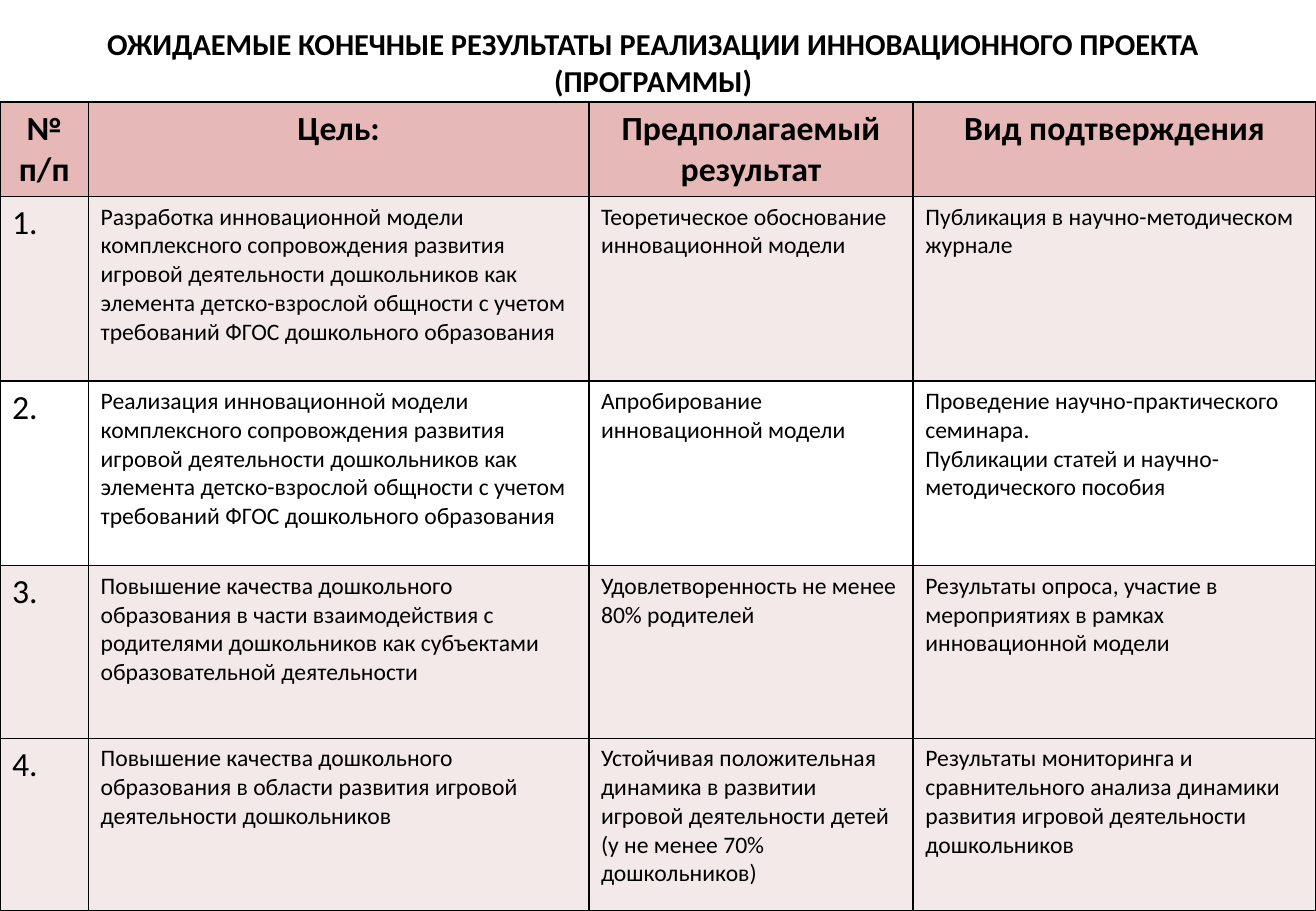
from typing import NamedTuple

from lxml.etree import SubElement
from pptx import Presentation
from pptx.dml.color import RGBColor
from pptx.enum.text import PP_ALIGN as Align
from pptx.oxml.ns import qn
from pptx.util import Cm, Pt

FONT = "Calibri"
BLACK, WHITE, ROSE, PALE_ROSE = "000000", "FFFFFF", "E6B9B8", "F4E9E9"
SLIDE_W, SLIDE_H = 27.51, 19.05
TABLE_TOP = 2.13
COL_WIDTHS = (1.85, 10.46, 6.78, 8.42)
ROW_HEIGHTS = (1.98, 3.86, 3.86, 3.61, 3.61)

TITLE = "ОЖИДАЕМЫЕ КОНЕЧНЫЕ РЕЗУЛЬТАТЫ РЕАЛИЗАЦИИ ИННОВАЦИОННОГО ПРОЕКТА (ПРОГРАММЫ)"
HEADERS = ("№\nп/п", "Цель:", "Предполагаемый результат", "Вид подтверждения")


class Goal(NamedTuple):
    goal: str
    result: str
    evidence: str
    fill: str = PALE_ROSE


GOALS = (
    Goal("Разработка инновационной модели комплексного сопровождения развития "
         "игровой деятельности дошкольников как элемента детско-взрослой общности "
         "с учетом требований ФГОС дошкольного образования",
         "Теоретическое обоснование инновационной модели",
         "Публикация в научно-методическом журнале"),
    Goal("Реализация инновационной модели комплексного сопровождения развития "
         "игровой деятельности дошкольников как элемента детско-взрослой общности "
         "с учетом требований ФГОС дошкольного образования",
         "Апробирование инновационной модели",
         "Проведение научно-практического семинара.\n"
         "Публикации статей и научно-методического пособия",
         WHITE),
    Goal("Повышение качества дошкольного образования в части взаимодействия "
         "с родителями дошкольников как субъектами образовательной деятельности",
         "Удовлетворенность не менее 80% родителей",
         "Результаты опроса, участие в мероприятиях в рамках инновационной модели"),
    Goal("Повышение качества дошкольного образования в области развития игровой "
         "деятельности дошкольников",
         "Устойчивая положительная динамика в развитии игровой деятельности детей "
         "(у не менее 70% дошкольников)",
         "Результаты мониторинга и сравнительного анализа динамики развития "
         "игровой деятельности дошкольников"),
)


def color(value: str) -> RGBColor:
    return RGBColor.from_string(value)


def write(tf, text: str, size: int, bold: bool = False, align: Align = Align.LEFT) -> None:
    tf.text = text
    for p in tf.paragraphs:
        p.alignment = align
        p.font.name = FONT
        p.font.size = Pt(size)
        p.font.bold = bold
        p.font.color.rgb = color(BLACK)


def add_borders(cell) -> None:
    """Outline the cell; must run before its fill, which follows the lines in the XML."""
    tc_pr = cell._tc.get_or_add_tcPr()
    for side in ("lnL", "lnR", "lnT", "lnB"):
        ln = SubElement(tc_pr, qn(f"a:{side}"), w=str(Pt(1)))
        fill = SubElement(ln, qn("a:solidFill"))
        SubElement(fill, qn("a:srgbClr"), val=BLACK)


def fill_cell(cell, text: str, fill: str, size: int,
              bold: bool = False, align: Align = Align.LEFT) -> None:
    add_borders(cell)
    cell.fill.solid()
    cell.fill.fore_color.rgb = color(fill)
    write(cell.text_frame, text, size, bold, align)


def add_title(slide) -> None:
    box = slide.shapes.add_textbox(Cm(0.46), Cm(0.41), Cm(26.39), Cm(1.78))
    box.text_frame.word_wrap = True
    write(box.text_frame, TITLE, 18, True, Align.CENTER)


def add_goals_table(slide) -> None:
    frame = slide.shapes.add_table(
        len(ROW_HEIGHTS), len(COL_WIDTHS),
        Cm(0), Cm(TABLE_TOP), Cm(SLIDE_W), Cm(sum(ROW_HEIGHTS)))
    table = frame.table
    for column, width in zip(table.columns, COL_WIDTHS):
        column.width = Cm(width)
    for row, height in zip(table.rows, ROW_HEIGHTS):
        row.height = Cm(height)

    for col, header in enumerate(HEADERS):
        fill_cell(table.cell(0, col), header, ROSE, 20, True, Align.CENTER)
    for row, item in enumerate(GOALS, start=1):
        fill_cell(table.cell(row, 0), f"{row}.", item.fill, 20)
        for col, text in enumerate((item.goal, item.result, item.evidence), start=1):
            fill_cell(table.cell(row, col), text, item.fill, 14)


def main() -> None:
    prs = Presentation()
    prs.slide_width, prs.slide_height = Cm(SLIDE_W), Cm(SLIDE_H)
    slide = prs.slides.add_slide(prs.slide_layouts[6])
    add_title(slide)
    add_goals_table(slide)
    prs.save("out.pptx")


if __name__ == "__main__":
    main()
